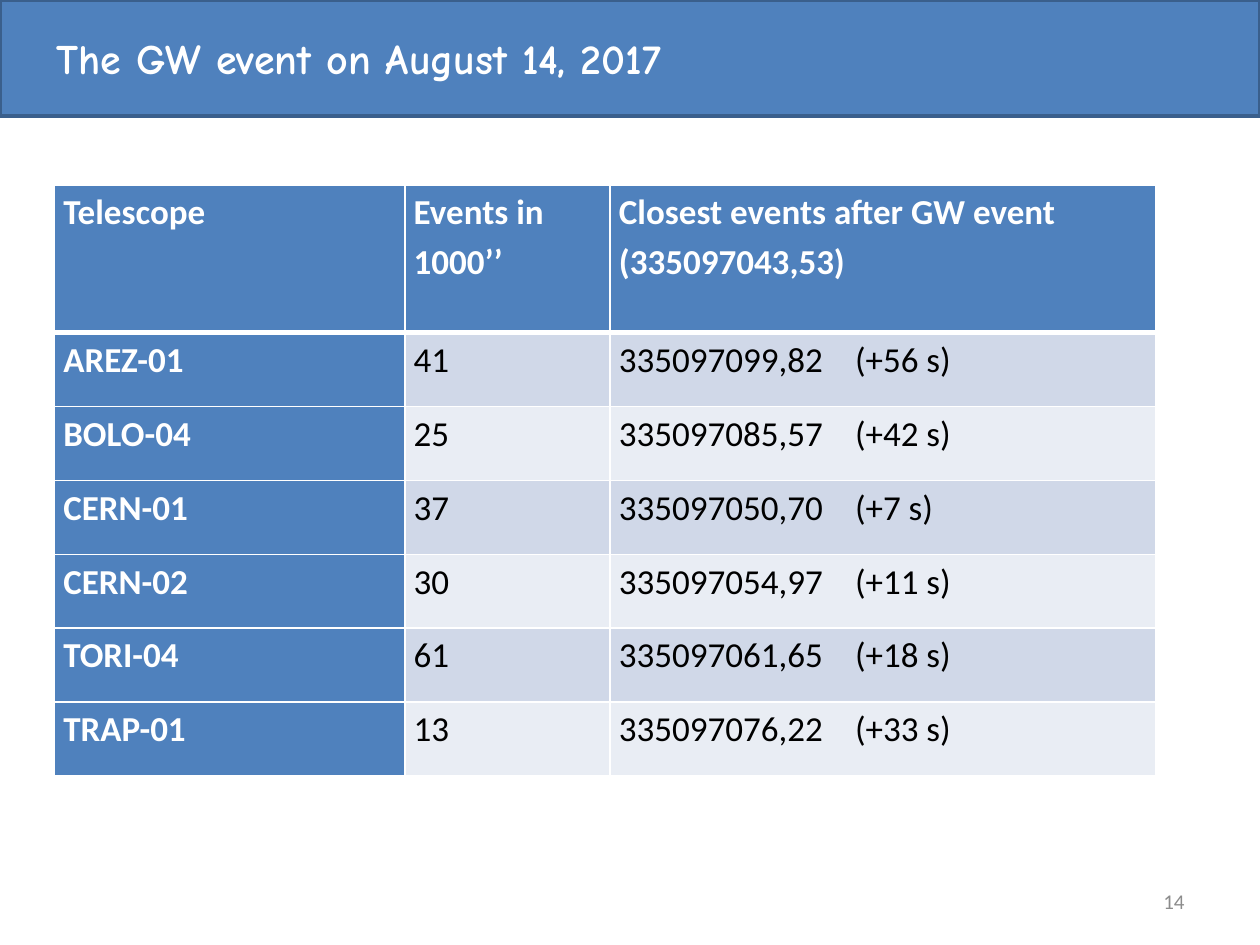
import pptx
import pptx.dml.color
import pptx.enum.shapes
import pptx.enum.text
import pptx.oxml
import pptx.oxml.ns
import pptx.util

Pt = pptx.util.Pt
ALIGN = pptx.enum.text.PP_ALIGN
ANCHOR = pptx.enum.text.MSO_ANCHOR

TITLE = "The GW event on August 14, 2017"
PAGE_NUMBER = "14"
HEADER = ["Telescope", "Events in 1000’’", "Closest events after GW event\n(335097043,53)"]
EVENTS = [
    ("AREZ-01", "41", "335097099,82", "(+56 s)"),
    ("BOLO-04", "25", "335097085,57", "(+42 s)"),
    ("CERN-01", "37", "335097050,70", "(+7 s)"),
    ("CERN-02", "30", "335097054,97", "(+11 s)"),
    ("TORI-04", "61", "335097061,65", "(+18 s)"),
    ("TRAP-01", "13", "335097076,22", "(+33 s)"),
]

THEME = {
    "accent": "4F81BD", "edge": "3A5F8C", "bands": ("D0D8E8", "E9EDF4"),
    "light": "FFFFFF", "dark": "000000", "muted": "8C8C8C",
    "heading": "Comic Neue", "body": "Calibri",
    "title_size": 24, "table_size": 20, "number_size": 12,
}
PAGE_SIZE = (720, 540)
BANNER = (0, 0, 720, 66.24)
TITLE_BOX = (25.2, 15.12, 629.28, 65.52)
NUMBER_BOX = (516.24, 500.4, 167.76, 28.8)
TABLE_ORIGIN = (31.2, 105.8)
COLUMNS = [200.2, 117.3, 311.7]
ROW_HEIGHT = 42.2
DELAY_TAB = 134.9


def color(name):
    return pptx.dml.color.RGBColor.from_string(name)


def apply(target, **values):
    for name, value in values.items():
        setattr(target, name, value)


def fill(target, name):
    target.fill.solid()
    target.fill.fore_color.rgb = color(name)


def write(frame, text, font, size, ink, bold=False, **para_format):
    frame.word_wrap = True
    for index, line in enumerate(text.split("\n")):
        para = frame.add_paragraph() if index else frame.paragraphs[0]
        apply(para, **para_format)
        span = para.add_run()
        span.text = line
        apply(span.font, name=font, size=Pt(size), bold=bold)
        span.font.color.rgb = color(ink)


def add_text(page, bounds, text, *style, anchor=ANCHOR.TOP, **para_format):
    box = page.shapes.add_textbox(*map(Pt, bounds))
    box.text_frame.vertical_anchor = anchor
    write(box.text_frame, text, *style, **para_format)


def add_borders(cell, widths):
    properties = cell._tc.get_or_add_tcPr()
    for side, width in widths.items():
        properties.append(pptx.oxml.parse_xml(
            f'<a:ln{side} {pptx.oxml.ns.nsdecls("a")} w="{Pt(width)}"><a:solidFill>'
            f'<a:srgbClr val="{THEME["light"]}"/></a:solidFill></a:ln{side}>'))


def add_tab(para, position):
    para._p.get_or_add_pPr().append(pptx.oxml.parse_xml(
        f'<a:tabLst {pptx.oxml.ns.nsdecls("a")}><a:tab pos="{Pt(position)}" algn="l"/></a:tabLst>'))


def add_event_table(page):
    rows = [HEADER] + [(name, count, f"{time}\t{delay}") for name, count, time, delay in EVENTS]
    heights = [2 * ROW_HEIGHT] + [ROW_HEIGHT] * len(EVENTS)
    bounds = (*TABLE_ORIGIN, sum(COLUMNS), sum(heights))
    table = page.shapes.add_table(len(rows), len(COLUMNS), *map(Pt, bounds)).table
    apply(table, first_row=False, horz_banding=False)
    for column, width in zip(table.columns, COLUMNS):
        column.width = Pt(width)
    for r, (row, height) in enumerate(zip(rows, heights)):
        table.rows[r].height = Pt(height)
        for c, text in enumerate(row):
            cell = table.cell(r, c)
            label = r == 0 or c == 0
            apply(cell, margin_left=Pt(5), margin_right=Pt(5), margin_top=0, margin_bottom=0)
            add_borders(cell, {"L": 1, "R": 1, "T": 3 if r == 1 else 1, "B": 1 if r else 3})
            fill(cell, THEME["accent"] if label else THEME["bands"][(r - 1) % 2])
            write(cell.text_frame, text, THEME["body"], THEME["table_size"],
                  THEME["light" if label else "dark"], label, line_spacing=1.15)
            if "\t" in text:
                add_tab(cell.text_frame.paragraphs[0], DELAY_TAB)


def main():
    deck = pptx.Presentation()
    apply(deck, slide_width=Pt(PAGE_SIZE[0]), slide_height=Pt(PAGE_SIZE[1]))
    page = deck.slides.add_slide(deck.slide_layouts[6])

    banner = page.shapes.add_shape(pptx.enum.shapes.MSO_SHAPE.RECTANGLE, *map(Pt, BANNER))
    banner.shadow.inherit = False
    fill(banner, THEME["accent"])
    fill(banner.line, THEME["edge"])
    banner.line.width = Pt(2)

    add_text(page, TITLE_BOX, TITLE, THEME["heading"], THEME["title_size"], THEME["light"], True)
    add_text(page, NUMBER_BOX, PAGE_NUMBER, THEME["body"], THEME["number_size"], THEME["muted"],
             anchor=ANCHOR.MIDDLE, alignment=ALIGN.RIGHT)
    add_event_table(page)
    deck.save("out.pptx")


if __name__ == "__main__":
    main()
